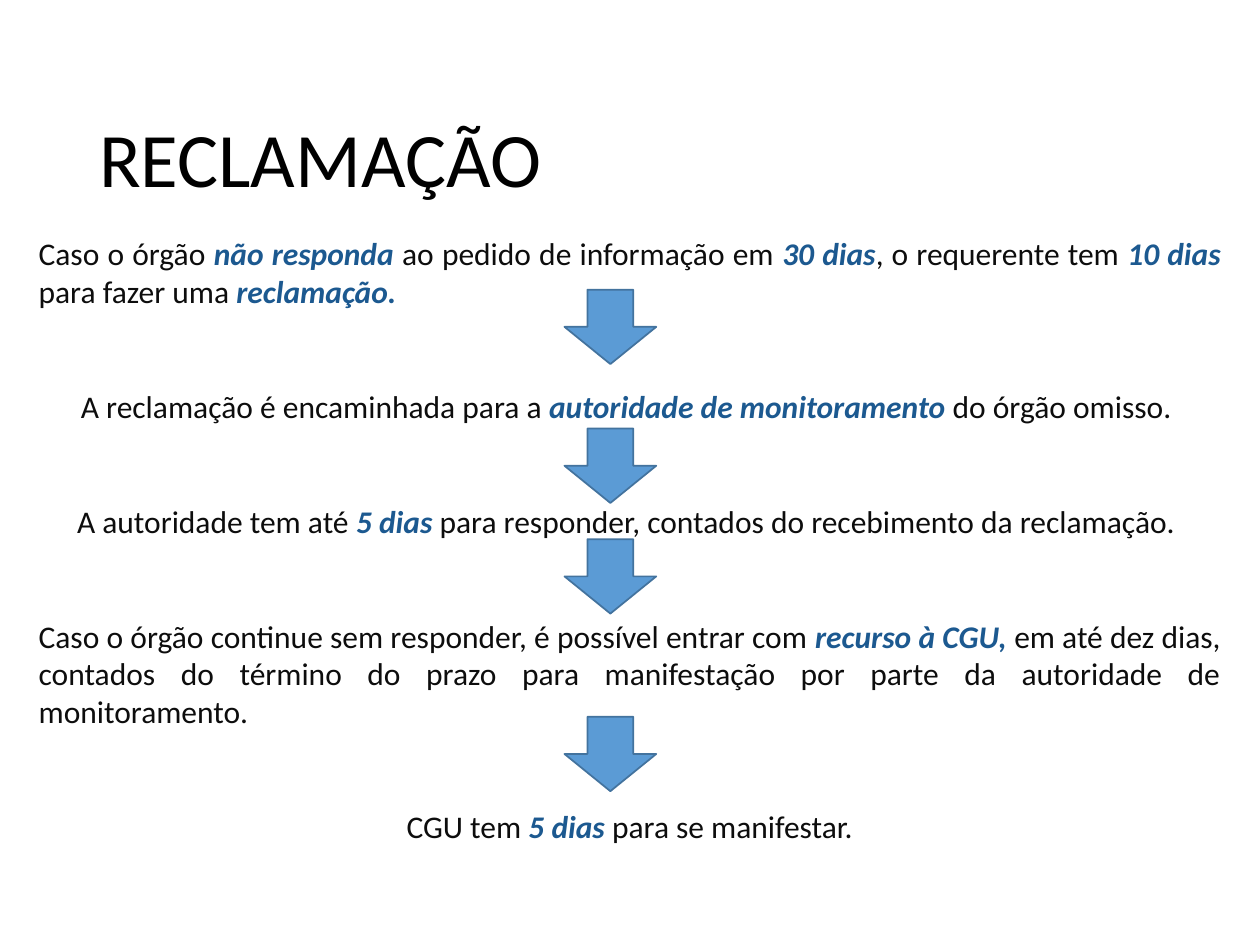
"""Builds the slide on the steps of a complaint (reclamação)."""
from dataclasses import dataclass

import pptx
import pptx.dml.color
import pptx.enum.shapes
import pptx.enum.text
import pptx.presentation
import pptx.shapes.autoshape
import pptx.slide
import pptx.text.text
import pptx.util

Cm = pptx.util.Cm
Pt = pptx.util.Pt
ALIGN = pptx.enum.text.PP_ALIGN
ANCHOR = pptx.enum.text.MSO_ANCHOR

COLOURS = {
    "title": "000000",
    "body": "0D0D0D",
    "emphasis": "1C5990",
    "arrow": "5B9BD5",
    "arrow_edge": "43739E",
}
FONT = "Calibri"
STEP_GAP = Pt(44)


@dataclass(frozen=True)
class Phrase:
    text: str
    emphasis: bool = False


@dataclass(frozen=True)
class Step:
    phrases: tuple[Phrase, ...]
    align: ALIGN


@dataclass(frozen=True)
class Arrow:
    top: float
    left: float = 11.38
    width: float = 1.85
    height: float = 1.5


STEPS = (
    Step((
        Phrase("Caso o órgão "),
        Phrase("não responda ", True),
        Phrase("ao pedido de informação em "),
        Phrase("30 dias", True),
        Phrase(", o requerente tem "),
        Phrase("10 dias ", True),
        Phrase("para fazer uma "),
        Phrase("reclamação. ", True),
    ), ALIGN.JUSTIFY),
    Step((
        Phrase("A reclamação é encaminhada para a "),
        Phrase("autoridade de monitoramento ", True),
        Phrase("do órgão omisso. "),
    ), ALIGN.CENTER),
    Step((
        Phrase("A autoridade tem até "),
        Phrase("5 dias ", True),
        Phrase("para responder, contados do recebimento da reclamação. "),
    ), ALIGN.CENTER),
    Step((
        Phrase("Caso o órgão continue sem responder, é possível entrar com "),
        Phrase("recurso à CGU, ", True),
        Phrase("em até dez dias, contados do término do prazo para "
               "manifestação por parte da autoridade de monitoramento."),
    ), ALIGN.JUSTIFY),
    Step((
        Phrase("CGU tem "),
        Phrase("5 dias ", True),
        Phrase("para se manifestar."),
    ), ALIGN.CENTER),
)
ARROWS = (Arrow(5.84), Arrow(8.64), Arrow(10.87), Arrow(14.45))


def colour(role: str) -> pptx.dml.color.RGBColor:
    return pptx.dml.color.RGBColor.from_string(COLOURS[role])


def add_text_frame(slide: pptx.slide.Slide, left: float, top: float,
                   width: float, height: float) -> pptx.text.text.TextFrame:
    box = slide.shapes.add_textbox(Cm(left), Cm(top), Cm(width), Cm(height))
    box.text_frame.word_wrap = True
    return box.text_frame


def set_font(paragraph: pptx.text.text._Paragraph, size: int, role: str) -> None:
    paragraph.font.name = FONT
    paragraph.font.size = Pt(size)
    paragraph.font.color.rgb = colour(role)


def add_title(slide: pptx.slide.Slide, text: str) -> None:
    frame = add_text_frame(slide, 1.75, 1.88, 21.9, 2.79)
    frame.vertical_anchor = ANCHOR.MIDDLE
    title = frame.paragraphs[0]
    title.text = text
    title.line_spacing = 0.9
    set_font(title, 44, "title")


def add_steps(slide: pptx.slide.Slide, steps: tuple[Step, ...]) -> None:
    frame = add_text_frame(slide, 0.53, 4.6, 24.33, 12.57)
    for index, step in enumerate(steps):
        paragraph = frame.add_paragraph() if index else frame.paragraphs[0]
        paragraph.alignment = step.align
        if index:
            paragraph.space_before = STEP_GAP
        set_font(paragraph, 18, "body")
        for phrase in step.phrases:
            run = paragraph.add_run()
            run.text = phrase.text
            if phrase.emphasis:
                run.font.bold = True
                run.font.italic = True
                run.font.color.rgb = colour("emphasis")


def add_arrow(slide: pptx.slide.Slide, arrow: Arrow) -> None:
    shape = slide.shapes.add_shape(
        pptx.enum.shapes.MSO_SHAPE.DOWN_ARROW,
        Cm(arrow.left), Cm(arrow.top), Cm(arrow.width), Cm(arrow.height))
    shape.shadow.inherit = False
    shape.fill.solid()
    shape.fill.fore_color.rgb = colour("arrow")
    shape.line.color.rgb = colour("arrow_edge")
    shape.line.width = Pt(1)


def main() -> None:
    presentation = pptx.Presentation()
    presentation.slide_width = Cm(25.4)
    presentation.slide_height = Cm(19.05)
    slide = presentation.slides.add_slide(presentation.slide_layouts[6])
    add_steps(slide, STEPS)
    for arrow in ARROWS:
        add_arrow(slide, arrow)
    add_title(slide, "RECLAMAÇÃO")
    presentation.save("out.pptx")


if __name__ == "__main__":
    main()
